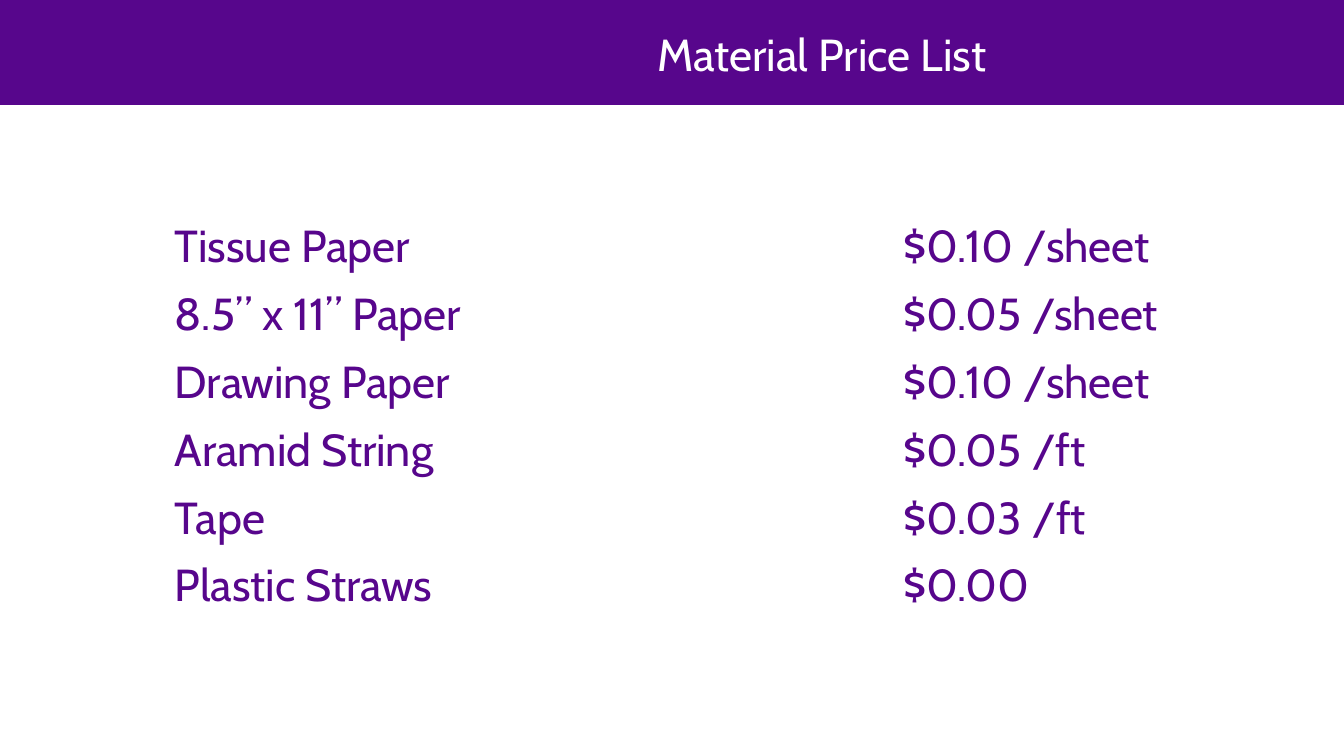
import dataclasses

import pptx
import pptx.dml.color
import pptx.enum.shapes
import pptx.enum.text
import pptx.util

Inches = pptx.util.Inches


@dataclasses.dataclass(frozen=True)
class Theme:
    """Hold the colours, font and type size of the slide."""
    purple: str = "57068C"
    white: str = "FFFFFF"
    font: str = "Cabin"
    size: int = 24


THEME = Theme()
SLIDE_WIDTH = 10
SLIDE_HEIGHT = SLIDE_WIDTH * 9 / 16
PRICES = [
    ("Tissue Paper", "$0.10 /sheet"),
    ("8.5” x 11” Paper", "$0.05 /sheet"),
    ("Drawing Paper", "$0.10 /sheet"),
    ("Aramid String", "$0.05 /ft"),
    ("Tape", "$0.03 /ft"),
    ("Plastic Straws", "$0.00"),
]


def write_text(frame, text, *, color, align=pptx.enum.text.PP_ALIGN.LEFT):
    """Write one formatted paragraph into a text frame."""
    paragraph = frame.paragraphs[0]
    paragraph.alignment = align
    run = paragraph.add_run()
    run.text = text
    run.font.name = THEME.font
    run.font.size = pptx.util.Pt(THEME.size)
    run.font.bold = False
    run.font.color.rgb = pptx.dml.color.RGBColor.from_string(color)


def build_header(slide, left, top, width, height):
    """Place the purple band with the title in front of it."""
    band = slide.shapes.add_shape(
        pptx.enum.shapes.MSO_SHAPE.RECTANGLE,
        Inches(left), Inches(top), Inches(width), Inches(height))
    band.shadow.inherit = False
    band.fill.solid()
    band.fill.fore_color.rgb = pptx.dml.color.RGBColor.from_string(THEME.purple)
    band.line.fill.background()

    title = slide.shapes.title
    title.element.addprevious(band.element)
    title.left, title.top = Inches(left + 2.48), Inches(top + 0.25)
    title.width, title.height = Inches(7.27), Inches(0.3)
    frame = title.text_frame
    frame.margin_left = frame.margin_right = 0
    frame.margin_top = frame.margin_bottom = 0
    frame.word_wrap = True
    frame.auto_size = pptx.enum.text.MSO_AUTO_SIZE.NONE
    frame.vertical_anchor = pptx.enum.text.MSO_ANCHOR.MIDDLE
    write_text(frame, "Material Price List", color=THEME.white,
               align=pptx.enum.text.PP_ALIGN.CENTER)


def build_price_table(slide, left, top, width, height):
    """Place the plain two-column table of materials and prices."""
    price_width = 2.5
    table = slide.shapes.add_table(
        len(PRICES), 2,
        Inches(left), Inches(top), Inches(width), Inches(height)).table
    table.first_row = False
    table.horz_banding = False
    table.columns[0].width = Inches(width - price_width)
    table.columns[1].width = Inches(price_width)
    for row, texts in zip(table.rows, PRICES):
        for cell, text in zip(row.cells, texts):
            cell.fill.background()
            write_text(cell.text_frame, text, color=THEME.purple)


def main():
    """Build and save the price list slide."""
    presentation = pptx.Presentation()
    presentation.slide_width = Inches(SLIDE_WIDTH)
    presentation.slide_height = Inches(SLIDE_HEIGHT)
    slide = presentation.slides.add_slide(presentation.slide_layouts[5])
    build_header(slide, 0, 0, 10.01, 0.78)
    build_price_table(slide, 1.2, 1.58, 7.92, 2.46)
    presentation.save("out.pptx")


if __name__ == "__main__":
    main()
